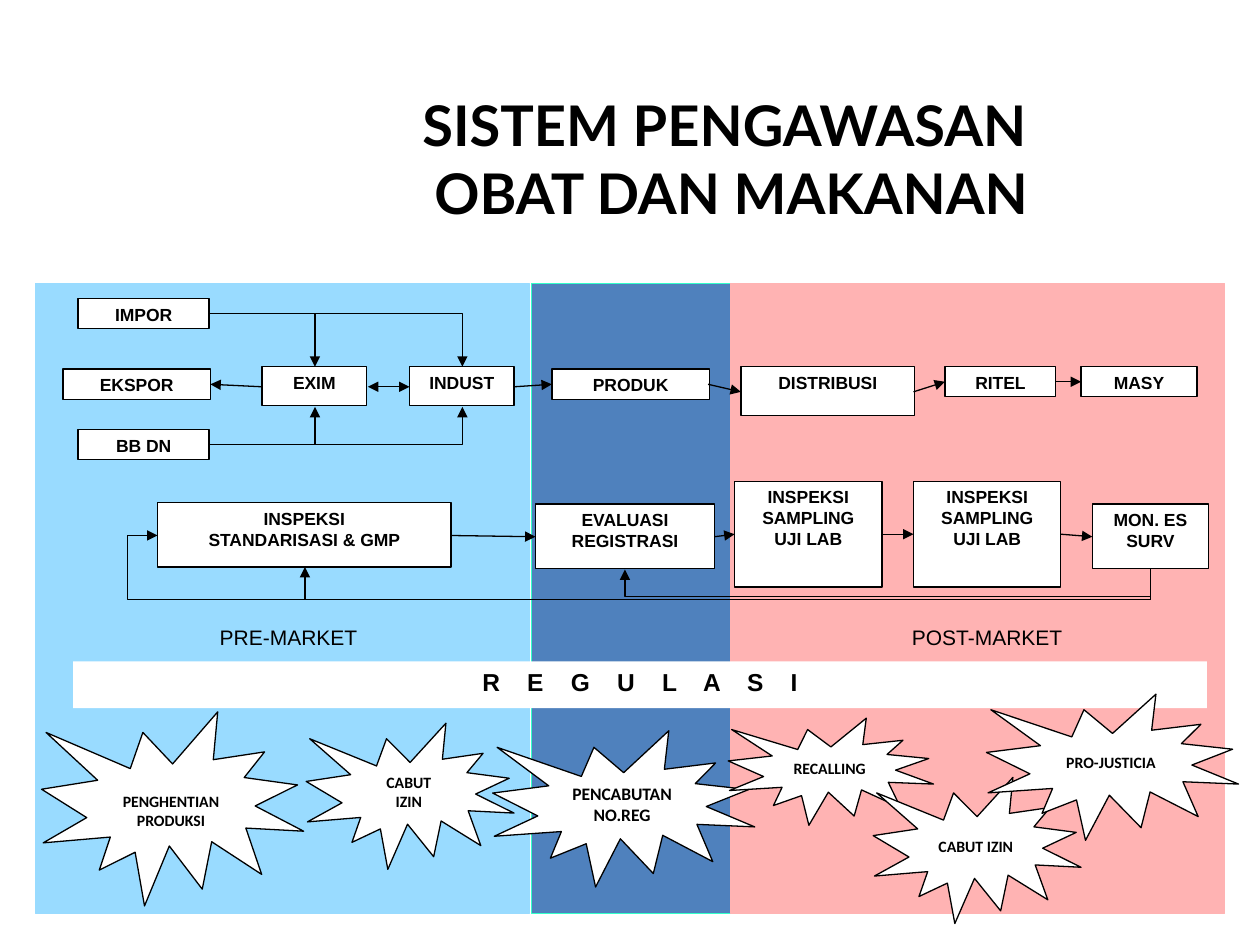
from lxml import etree
from pptx import Presentation, util as u
from pptx.dml.color import RGBColor
from pptx.enum import shapes, text
from pptx.oxml.ns import qn

I = u.Inches
BOX = shapes.MSO_SHAPE.RECTANGLE
SEAL = shapes.MSO_SHAPE.EXPLOSION1
TOP, MIDDLE = text.MSO_ANCHOR.TOP, text.MSO_ANCHOR.MIDDLE
rgb = RGBColor.from_string


def add_text(sp, lines, size, font="Arial", bold=True, anchor=TOP,
             margins=(0.09, 0.04, 0.09, 0.04), wrap=True):
    """Write centred black lines; margins are left, top, right, bottom in inches."""
    tf = sp.text_frame
    frame = dict(word_wrap=wrap, vertical_anchor=anchor)
    frame.update(zip(("margin_left", "margin_top", "margin_right", "margin_bottom"),
                     map(I, margins)))
    for name, value in frame.items():
        setattr(tf, name, value)
    tf.text = lines
    for p in tf.paragraphs:
        p.alignment = text.PP_ALIGN.CENTER
        for name, value in dict(size=u.Pt(size), name=font, bold=bold).items():
            setattr(p.font, name, value)
        p.font.color.rgb = rgb("000000")
        for r in p.runs:
            for name, value in dict(size=u.Pt(size), name=font, bold=bold).items():
                setattr(r.font, name, value)
            r.font.color.rgb = rgb("000000")


def style(sp, fill="FFFFFF", line="000000"):
    """Set fill and outline; a connector gets only the outline and no shadow."""
    if hasattr(sp, "fill"):
        sp.shadow.inherit = False
        sp.fill.solid()
        sp.fill.fore_color.rgb = rgb(fill)
    else:
        etree.SubElement(sp.line._get_or_add_ln().getparent(), qn("a:effectLst"))
    sp.line.width = u.Pt(0.75)
    sp.line.color.rgb = rgb(line)


prs = Presentation()
prs.slide_width, prs.slide_height = I(10), I(7.5)
s = prs.slides.add_slide(prs.slide_layouts[6])

# Market bands
for x, w, fill, line in [(0.28, 3.92, "99DBFF", "99DBFF"),
                         (4.22, 1.58, "4F81BD", "33FFCA"),
                         (5.8, 3.92, "FFB3B3", "FFB3B3")]:
    style(s.shapes.add_shape(BOX, I(x), I(2.25), I(w), I(5)), fill, line)

title = s.shapes.add_textbox(I(1.83), I(0.67), I(7.95), I(1.17))
add_text(title, "SISTEM PENGAWASAN \vOBAT DAN MAKANAN", 32, "Lato",
         anchor=MIDDLE, margins=(0.1, 0.05, 0.1, 0.05))

# Supply chain and inspection boxes
for x, y, w, h, label in [
    (0.62, 2.37, 1.04, 0.24, "IMPOR"),
    (0.5, 2.93, 1.17, 0.24, "EKSPOR"),
    (0.62, 3.41, 1.04, 0.24, "BB DN"),
    (2.08, 2.91, 0.83, 0.31, "EXIM"),
    (3.25, 2.91, 0.83, 0.31, "INDUST"),
    (4.38, 2.93, 1.25, 0.24, "PRODUK"),
    (5.88, 2.91, 1.38, 0.39, "DISTRIBUSI"),
    (7.5, 2.91, 0.88, 0.24, "RITEL"),
    (8.58, 2.91, 0.92, 0.24, "MASY"),
    (1.25, 3.99, 2.33, 0.51, "INSPEKSI\nSTANDARISASI & GMP"),
    (4.25, 4, 1.42, 0.51, "EVALUASI\nREGISTRASI"),
    (5.83, 3.82, 1.17, 0.84, "INSPEKSI\nSAMPLING\nUJI LAB"),
    (7.25, 3.82, 1.17, 0.84, "INSPEKSI\nSAMPLING\nUJI LAB"),
    (8.67, 4, 0.92, 0.51, "MON. ES\nSURV"),
]:
    sp = s.shapes.add_shape(BOX, I(x), I(y), I(w), I(h))
    style(sp)
    add_text(sp, label, 10)

# Arrows: from, to, preset, rotation, flipped, adjustments
STRAIGHT = ("line", 0, False, ())
CORNER = ("bentConnector2", 0, False, ())
arrows = [(1.67, y, x, end, CORNER)
          for y, end in [(2.49, 2.91), (3.53, 3.23)] for x in (2.5, 3.67)]
arrows += [(*ends, STRAIGHT) for ends in [
    (2.08, 3.07, 1.67, 3.05), (2.92, 3.07, 3.25, 3.07), (4.08, 3.07, 4.38, 3.05),
    (5.62, 3.05, 5.88, 3.11), (7.25, 3.11, 7.5, 3.03), (8.38, 3.03, 8.58, 3.03),
    (3.58, 4.25, 4.25, 4.26), (5.67, 4.26, 5.83, 4.24), (7, 4.24, 7.25, 4.24),
    (8.42, 4.24, 8.67, 4.26)]]
# Feedback loops: ends are those of the frame before it is turned
arrows += [
    (5.06, 0.44, 5.32, 8.32, ("bentConnector4", 270, True, (-0.95, 1.03))),
    (7.04, 2.43, 7.05, 6.6, ("bentConnector3", 90, False, (23,))),
    (5.77, 1.15, 5.78, 7.86, ("bentConnector3", 270, True, (-25,))),
]
for x1, y1, x2, y2, (preset, turn, flip, adjust) in arrows:
    c = s.shapes.add_connector(shapes.MSO_CONNECTOR.STRAIGHT, I(x1), I(y1), I(x2), I(y2))
    style(c)
    ln = c.line._get_or_add_ln()
    if (x1, x2) == (2.92, 3.25):
        etree.SubElement(ln, qn("a:headEnd"), type="triangle")
    etree.SubElement(ln, qn("a:tailEnd"), type="triangle")
    geom = ln.getparent().find(qn("a:prstGeom"))
    geom.set("prst", preset)
    xfrm = ln.getparent().find(qn("a:xfrm"))
    if turn:
        xfrm.set("rot", str(turn * 60000))
    if flip:
        xfrm.set("flipV", "1")
    for n, value in enumerate(adjust, 1):
        etree.SubElement(geom.find(qn("a:avLst")), qn("a:gd"), name=f"adj{n}",
                         fmla=f"val {round(value * 100000)}")

for x, w, label in [(1.5, 1.58, "PRE-MARKET"), (7, 1.67, "POST-MARKET")]:
    sp = s.shapes.add_textbox(I(x), I(4.91), I(w), I(0.19))
    add_text(sp, label, 12, bold=False, margins=(0.1, 0.05, 0.1, 0.05), wrap=False)

# Regulation bar with wide letter spacing
sp = s.shapes.add_shape(BOX, I(0.58), I(5.25), I(9), I(0.37))
style(sp)
sp.line.fill.background()
add_text(sp, "R E G U L A S I", 14)
sp.text_frame.paragraphs[0].runs[0].font._element.set("spc", "584")

# Sanctions
for x, y, w, h, size, top, label in [
    (0.33, 5.65, 2.08, 1.54, 9, 0.16, "PENGHENTIAN\nPRODUKSI"),
    (2.43, 5.74, 1.65, 1.16, 9, 0.04, "CABUT\nIZIN"),
    (3.91, 5.8, 2.08, 1.24, 10, 0.04, "PENCABUTAN\nNO.REG"),
    (5.78, 5.7, 1.63, 0.85, 9, 0.04, "RECALLING"),
    (6.93, 6.17, 1.65, 1.16, 9, 0.04, "CABUT IZIN"),
    (7.83, 5.51, 2, 1.16, 9, 0.04, "PRO-JUSTICIA"),
]:
    sp = s.shapes.add_shape(SEAL, I(x), I(y), I(w), I(h))
    style(sp)
    add_text(sp, label, size, "Calibri", anchor=MIDDLE, margins=(0, top, 0, 0.04))

prs.save("out.pptx")
